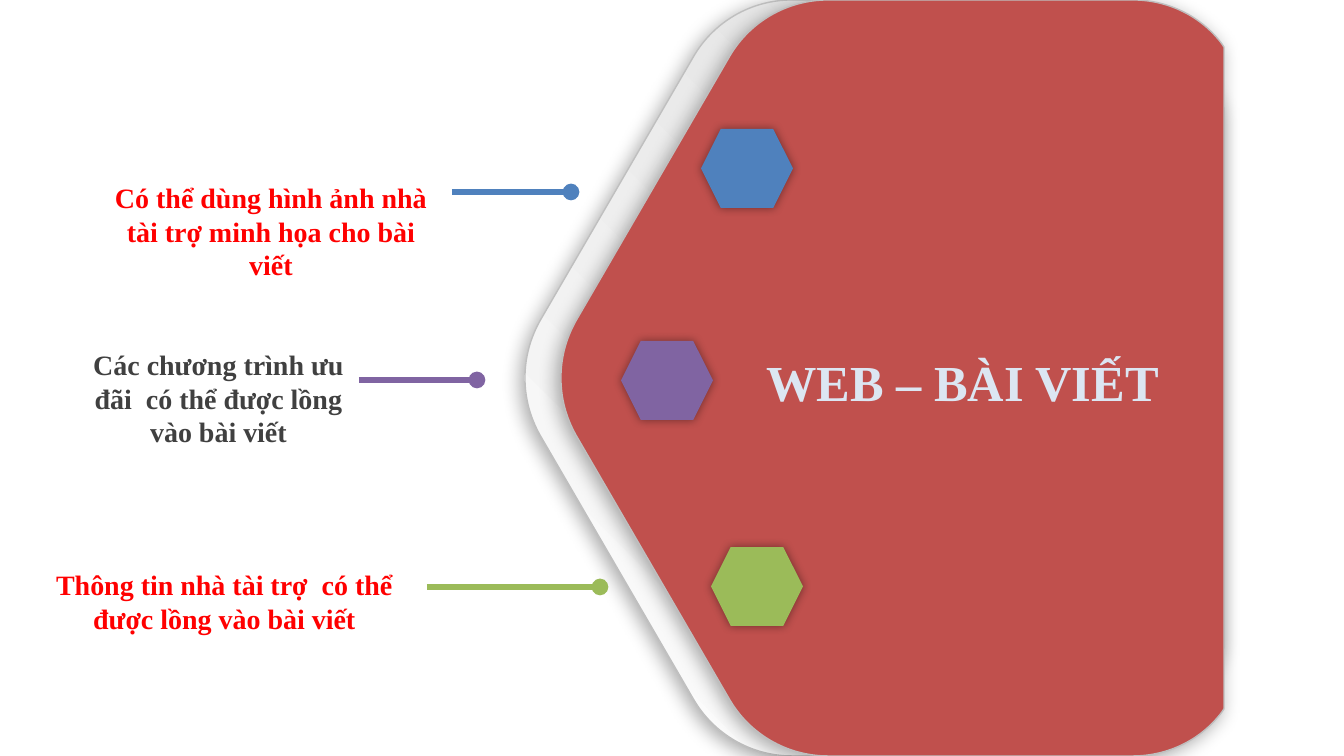
from lxml import etree
from pptx import Presentation
from pptx.dml.color import RGBColor
from pptx.enum.shapes import MSO_CONNECTOR, MSO_SHAPE
from pptx.enum.text import MSO_ANCHOR, MSO_AUTO_SIZE, PP_ALIGN
from pptx.oxml import parse_xml
from pptx.oxml.ns import qn
from pptx.util import Emu, Pt

STRAIGHT = MSO_CONNECTOR.STRAIGHT
HEXAGON = MSO_SHAPE.HEXAGON
CENTER = PP_ALIGN.CENTER
TOP, MIDDLE = MSO_ANCHOR.TOP, MSO_ANCHOR.MIDDLE
NO_FIT = MSO_AUTO_SIZE.NONE

BLUE = RGBColor(0x4F, 0x81, 0xBD)
PURPLE = RGBColor(0x80, 0x64, 0xA2)
GREEN = RGBColor(0x9B, 0xBB, 0x59)
BRICK = RGBColor(0xC0, 0x50, 0x4D)
RED = RGBColor(0xFF, 0x00, 0x00)
DARK = RGBColor(0x40, 0x40, 0x40)
PALE = RGBColor(0xDC, 0xE6, 0xF2)
EDGE = RGBColor(0xBF, 0xBF, 0xBF)
GREY = RGBColor(0xD9, 0xD9, 0xD9)
WHITE = RGBColor(0xFF, 0xFF, 0xFF)

FONT = "Times New Roman"
SCALE = 914400 / 134.4
WIDTH, HEIGHT = 1344, 756
A_NS = "http://schemas.openxmlformats.org/drawingml/2006/main"

# upper left edge of a panel, from its tip to its top side
LEFT = [(525, 378), (525, 398 - 40), (530, 339), (540, 321),
        (694, 56), (714, 22), (751, 0), (792, 0)]
# upper right corners, down to the cut at the right side
BACK = [(1097, 0), (1138, 0), (1175, 22), (1195, 56), (1224, 108)]
FRONT = [(1133, 0), (1168, 0), (1201, 16), (1222, 44), (1224, 47)]
# points used by each segment: 3 for a curve, 1 for a line
HALF = (3, 1, 3, 1, 3, 1)
KINDS = HALF + (1,) + HALF[::-1]

# label text, colour, label box, line (x1, x2, y), hexagon corner, accent
ITEMS = [
    ("Các chương trình ưu đãi  có thể được lồng vào bài viết", DARK,
     (78, 341, 281, 66), (359, 477, 380), (621, 341), PURPLE),
    ("Có thể dùng hình ảnh nhà tài trợ minh họa cho bài viết", RED,
     (90, 174, 362, 121), (452, 571, 192), (701, 129), BLUE),
    ("Thông tin nhà tài trợ  có thể được lồng vào bài viết", RED,
     (21, 561, 407, 51), (427, 600, 587), (711, 547), GREEN),
]


def px(*vals):
    return [Emu(round(v * SCALE)) for v in vals]


def bend(shape):
    """Turn each run of three curve points into one Bezier segment."""
    path = next(shape._element.iter(qn("a:path")))
    lines = iter(path.findall(qn("a:lnTo")))
    for kind in KINDS:
        run = [next(lines) for _ in range(kind)]
        if kind == 3:
            arc = etree.Element(qn("a:cubicBezTo"))
            run[0].addprevious(arc)
            for line in run:
                arc.append(line[0])
                path.remove(line)


def shade(shape, alpha, blur, dist=0, angle=0):
    """Outer shadow: alpha in percent, blur and dist in points."""
    shape.shadow.inherit = False
    fx = shape._element.spPr.find(qn("a:effectLst"))
    fx.append(parse_xml(
        f'<a:outerShdw xmlns:a="{A_NS}" blurRad="{Pt(blur)}" '
        f'dist="{Pt(dist)}" dir="{angle * 60000}" algn="ctr" '
        f'rotWithShape="0"><a:srgbClr val="000000">'
        f'<a:alpha val="{alpha * 1000}"/></a:srgbClr></a:outerShdw>'))


def add_panel(slide, shift, corner):
    """Rounded panel, mirrored about mid-height; returns its fill."""
    half = [(x + shift, y) for x, y in LEFT] + corner
    pts = half + [(x, HEIGHT - y) for x, y in reversed(half)]
    form = slide.shapes.build_freeform(*pts[0], scale=SCALE)
    form.add_line_segments(pts[1:], close=True)
    panel = form.convert_to_shape()
    bend(panel)
    panel.line.color.rgb = EDGE
    panel.line.width = Pt(0.75)
    shade(panel, 33, 10, 3, 135)
    return panel.fill


def add_line(group, x1, x2, y, color):
    line = group.shapes.add_connector(STRAIGHT, *px(x1, y, x2, y))
    line.line.color.rgb = color
    line.line.width = Pt(3)
    etree.SubElement(line.line._get_or_add_ln(), qn("a:tailEnd"), type="oval")
    etree.SubElement(line._element.spPr, qn("a:effectLst"))


def add_hex(slide, x, y, color):
    shape = slide.shapes.add_shape(HEXAGON, *px(x, y, 92, 79))
    shape.fill.solid()
    shape.fill.fore_color.rgb = color
    shape.line.fill.background()
    shade(shape, 40, 5)


def set_text(shape, text, size, color, anchor):
    frame = shape.text_frame
    frame.text = text
    frame.word_wrap = True
    frame.auto_size = NO_FIT
    frame.vertical_anchor = anchor
    para = frame.paragraphs[0]
    para.alignment = CENTER
    font = para.font
    font.name, font.size, font.bold = FONT, Pt(size), True
    font.color.rgb = color


def add_title(slide, text, box):
    title = slide.shapes.title
    title.left, title.top, title.width, title.height = px(*box)
    set_text(title, text, 27, PALE, MIDDLE)
    slide.shapes._spTree.append(title._element)  # bring to front


def main():
    prs = Presentation()
    prs.slide_width, prs.slide_height = px(WIDTH, HEIGHT)
    slide = prs.slides.add_slide(prs.slide_layouts[5])

    back = add_panel(slide, 0, BACK)
    back.gradient()
    back.gradient_angle = 225
    for stop, color in zip(back.gradient_stops, (GREY, WHITE)):
        stop.color.rgb = color
    front = add_panel(slide, 36, FRONT)
    front.solid()
    front.fore_color.rgb = BRICK

    for text, ink, box, line, spot, accent in ITEMS:
        group = slide.shapes.add_group_shape()
        add_line(group, *line, accent)
        label = group.shapes.add_textbox(*px(*box))
        set_text(label, text, 15, ink, TOP)
        add_hex(slide, *spot, accent)
    add_title(slide, "WEB – BÀI VIẾT", (718, 284, 489, 194))
    prs.save("out.pptx")


if __name__ == "__main__":
    main()
